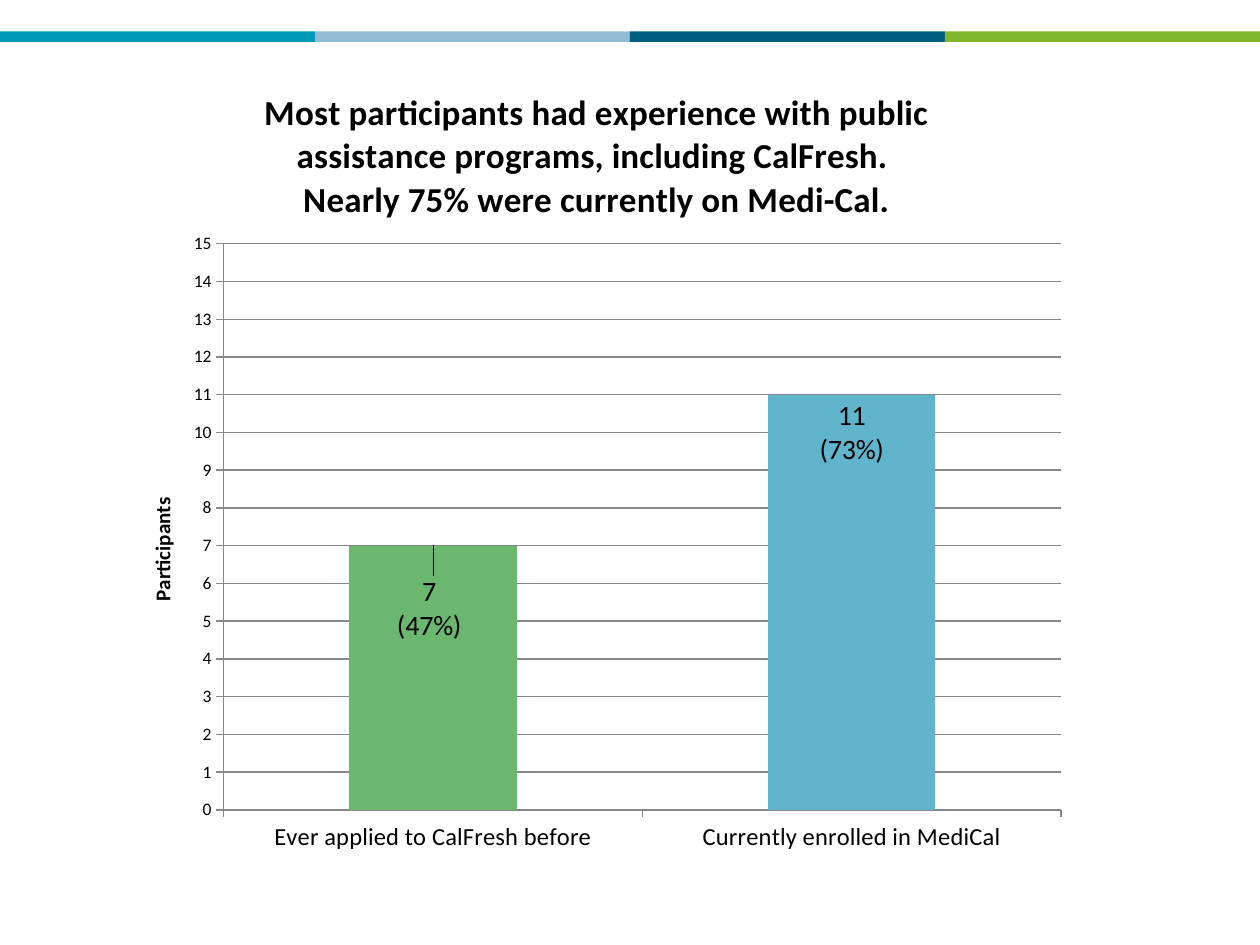
import pptx
import pptx.chart.data
import pptx.dml.color
import pptx.enum.chart
import pptx.enum.shapes
import pptx.oxml
import pptx.oxml.ns
import pptx.util

Pt = pptx.util.Pt
FONT = "Calibri"
COLORS = {
    "teal": "0098B7",
    "pale_blue": "92BCD1",
    "navy": "005E80",
    "lime": "80B62B",
    "green": "6BB76D",
    "sky": "60B5CC",
    "grid": "878787",
    "text": "000000",
}
CATEGORIES = ["Ever applied to CalFresh before", "Currently enrolled in MediCal"]
VALUES = [7, 11]
BAR_COLORS = ["green", "sky"]
BAR_LABELS = ["7\n(47%)", "11\n(73%)"]
TITLE = (
    "Most participants had experience with public assistance programs, "
    "including CalFresh. \nNearly 75% were currently on Medi-Cal."
)


def rgb(name):
    """Return the named palette colour."""
    return pptx.dml.color.RGBColor.from_string(COLORS[name])


def set_fill(fill, color):
    """Apply a solid palette fill."""
    fill.solid()
    fill.fore_color.rgb = rgb(color)


def set_font(font, size, bold=False):
    """Apply the slide's typeface in black."""
    font.name = FONT
    font.size = Pt(size)
    font.bold = bold
    font.color.rgb = rgb("text")


def set_line(line):
    """Apply the grey line used by axes and gridlines."""
    line.color.rgb = rgb("grid")
    line.width = Pt(0.75)


def set_layout(parent, previous=None, **values):
    """Give a chart part a manual layout, after the named child if any."""
    for old in parent.xpath("c:layout"):
        parent.remove(old)
    items = "".join(f'<c:{key} val="{value}"/>' for key, value in values.items())
    layout = pptx.oxml.parse_xml(
        f'<c:layout {pptx.oxml.ns.nsdecls("c")}>'
        f"<c:manualLayout>{items}</c:manualLayout></c:layout>"
    )
    if previous is None:
        parent.insert(0, layout)
    else:
        parent.xpath(previous)[0].addnext(layout)


def add_color_band(slide):
    """Add the strip of four equal colours across the top."""
    width = 180
    for index, color in enumerate(["teal", "pale_blue", "navy", "lime"]):
        shape = slide.shapes.add_shape(
            pptx.enum.shapes.MSO_SHAPE.RECTANGLE,
            Pt(index * width), Pt(18), Pt(width), Pt(6),
        )
        shape.shadow.inherit = False
        set_fill(shape.fill, color)
        shape.line.fill.background()


def add_title(title, text, size, x, y):
    """Write a bold chart or axis title at a fraction of the chart area."""
    title.text_frame.text = text
    for paragraph in title.text_frame.paragraphs:
        set_font(paragraph.font, size, True)
    set_layout(title._element, "c:tx", xMode="edge", yMode="edge", x=x, y=y)


def style_axes(chart):
    """Set scale, ticks, lines and fonts of both axes."""
    outside = pptx.enum.chart.XL_TICK_MARK.OUTSIDE
    for axis, size in ((chart.category_axis, 14), (chart.value_axis, 10)):
        axis.major_tick_mark = outside
        set_font(axis.tick_labels.font, size)
        set_line(axis.format.line)
    axis = chart.value_axis
    axis.minimum_scale = 0
    axis.maximum_scale = 15
    axis.major_unit = 1
    axis.has_major_gridlines = True
    set_line(axis.major_gridlines.format.line)
    add_title(axis.axis_title, "Participants", 12, 0.03, 0.54)


def style_bars(plot):
    """Colour and label each bar."""
    inside_end = pptx.enum.chart.XL_LABEL_POSITION.INSIDE_END
    plot.gap_width = 150
    plot.vary_by_categories = False
    series = plot.series[0]
    set_fill(series.format.fill, BAR_COLORS[0])
    series.data_labels.show_value = True
    series.data_labels.position = inside_end
    set_font(series.data_labels.font, 16)
    for index, (color, text) in enumerate(zip(BAR_COLORS, BAR_LABELS)):
        point = series.points[index]
        set_fill(point.format.fill, color)
        label = point.data_label
        label.text_frame.text = text
        label.position = inside_end
        for paragraph in label.text_frame.paragraphs:
            for run in paragraph.runs:
                set_font(run.font, 16)


def add_participation_chart(slide):
    """Add the column chart of public assistance experience."""
    data = pptx.chart.data.CategoryChartData()
    data.categories = CATEGORIES
    data.add_series("Series 1", VALUES)
    chart = slide.shapes.add_chart(
        pptx.enum.chart.XL_CHART_TYPE.COLUMN_CLUSTERED,
        Pt(66), Pt(30), Pt(552), Pt(467), data,
    ).chart
    set_font(chart.font, 10)
    chart.has_legend = False
    chart.has_title = True
    add_title(chart.chart_title, TITLE, 20, 0.15, 0.04)
    style_axes(chart)
    style_bars(chart.plots[0])
    space = chart._chartSpace
    set_layout(
        space.xpath(".//c:plotArea")[0], layoutTarget="inner",
        xMode="edge", yMode="edge", x=0.112, y=0.234, w=0.867, h=0.693,
    )
    first_label = space.xpath('.//c:dLbl[c:idx/@val="0"]')[0]
    set_layout(first_label, "c:idx", x=-0.004, y=0.03)


def main():
    """Build and save the slide."""
    presentation = pptx.Presentation()
    presentation.slide_width = Pt(720)
    presentation.slide_height = Pt(540)
    slide = presentation.slides.add_slide(presentation.slide_layouts[6])
    add_color_band(slide)
    add_participation_chart(slide)
    presentation.save("out.pptx")


if __name__ == "__main__":
    main()
